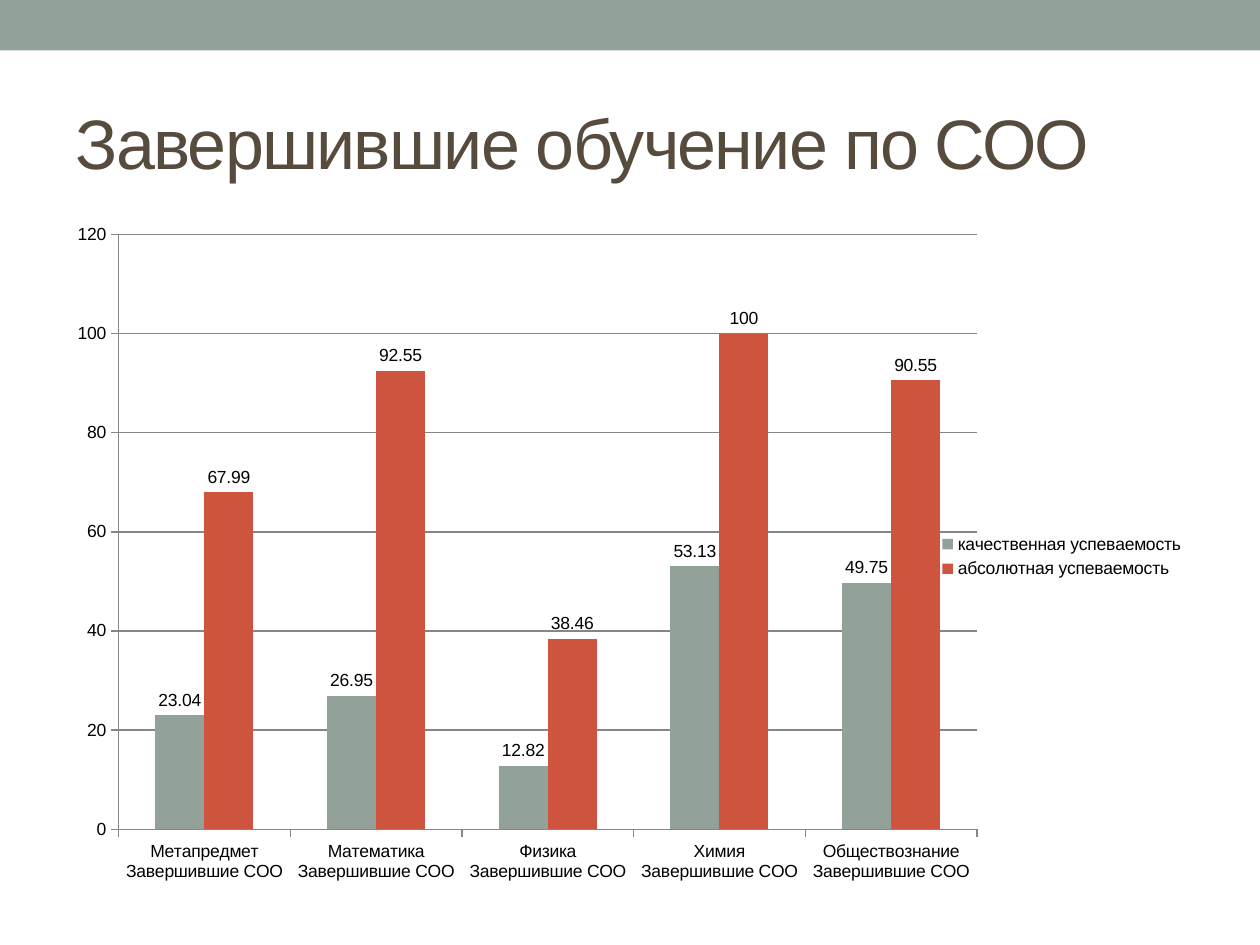
from lxml import etree
from pptx import Presentation
from pptx.chart.data import CategoryChartData
from pptx.dml.color import RGBColor
from pptx.enum.chart import XL_CHART_TYPE, XL_LABEL_POSITION, XL_LEGEND_POSITION, XL_TICK_MARK
from pptx.enum.shapes import MSO_SHAPE
from pptx.enum.text import MSO_ANCHOR, PP_ALIGN
from pptx.oxml.ns import qn
from pptx.util import Pt

COLUMN_CLUSTERED = XL_CHART_TYPE.COLUMN_CLUSTERED
OUTSIDE_END = XL_LABEL_POSITION.OUTSIDE_END
LEGEND_RIGHT = XL_LEGEND_POSITION.RIGHT
TICK_OUTSIDE = XL_TICK_MARK.OUTSIDE
RECTANGLE = MSO_SHAPE.RECTANGLE
MIDDLE = MSO_ANCHOR.MIDDLE
LEFT = PP_ALIGN.LEFT

FONT = "Arial"
COLORS = {
    "sage": "93A299",
    "red": "CF543F",
    "brown": "564B3C",
    "black": "000000",
    "axis": "868686",
}

CATEGORIES = [
    f"{subject} Завершившие СОО"
    for subject in ("Метапредмет", "Математика", "Физика", "Химия", "Обществознание")
]
SERIES = [
    ("качественная успеваемость", (23.04, 26.95, 12.82, 53.13, 49.75), "sage"),
    ("абсолютная успеваемость", (67.99, 92.55, 38.46, 100, 90.55), "red"),
]
# Inner plot area as fractions of the chart box
PLOT_AREA = {"x": 0.05, "y": 0.02, "w": 0.76, "h": 0.89}
PLOT_AREA.update(x=0.049, y=0.021, w=0.757, h=0.885)


def color(name):
    return RGBColor.from_string(COLORS[name])


def add_band(slide, left, top, width, height):
    band = slide.shapes.add_shape(RECTANGLE, Pt(left), Pt(top), Pt(width), Pt(height))
    band.shadow.inherit = False
    band.fill.solid()
    band.fill.fore_color.rgb = color("sage")
    band.line.fill.background()


def place_title(slide, left, top, width, height):
    title = slide.shapes.title
    title.left, title.top, title.width, title.height = map(Pt, (left, top, width, height))
    text_frame = title.text_frame
    text_frame.text = "Завершившие обучение по СОО"
    text_frame.word_wrap = True
    text_frame.vertical_anchor = MIDDLE
    paragraph = text_frame.paragraphs[0]
    paragraph.alignment = LEFT
    run = paragraph.runs[0]
    run.font.name = FONT
    run.font.size = Pt(40)
    run.font.color.rgb = color("brown")
    run.font._element.set("spc", "-100")


def set_plot_layout(chart):
    plot_area = chart._chartSpace.chart.plotArea
    layout = plot_area.find(qn("c:layout"))
    if layout is None:
        layout = etree.Element(qn("c:layout"))
        plot_area.insert(0, layout)
    manual = etree.SubElement(layout, qn("c:manualLayout"))
    settings = {"layoutTarget": "inner", "xMode": "edge", "yMode": "edge", **PLOT_AREA}
    for name, value in settings.items():
        etree.SubElement(manual, qn(f"c:{name}")).set("val", str(value))


def add_results_chart(slide, left, top, width, height):
    data = CategoryChartData()
    data.categories = CATEGORIES
    for name, values, _ in SERIES:
        data.add_series(name, values)
    frame = slide.shapes.add_chart(
        COLUMN_CLUSTERED, Pt(left), Pt(top), Pt(width), Pt(height), data
    )
    chart = frame.chart
    chart.has_title = False
    chart.font.name = FONT
    chart.font.size = Pt(10)
    chart.font.color.rgb = color("black")

    # Columns and their values
    plot = chart.plots[0]
    plot.vary_by_categories = False
    plot.gap_width = 150
    plot.overlap = 0
    for series, (_, _, fill) in zip(plot.series, SERIES):
        series.format.fill.solid()
        series.format.fill.fore_color.rgb = color(fill)
        series.data_labels.show_value = True
        series.data_labels.position = OUTSIDE_END

    # Axes and gridlines
    value_axis = chart.value_axis
    value_axis.minimum_scale = 0
    value_axis.maximum_scale = 120
    value_axis.major_unit = 20
    value_axis.has_major_gridlines = True
    for axis in (chart.category_axis, value_axis):
        axis.major_tick_mark = TICK_OUTSIDE
    for line in (
        chart.category_axis.format.line,
        value_axis.format.line,
        value_axis.major_gridlines.format.line,
    ):
        line.color.rgb = color("axis")
        line.width = Pt(0.75)

    chart.has_legend = True
    chart.legend.position = LEGEND_RIGHT
    chart.legend.include_in_layout = False
    set_plot_layout(chart)


def main():
    presentation = Presentation()
    presentation.slide_width = Pt(720)
    presentation.slide_height = Pt(540)
    slide = presentation.slides.add_slide(presentation.slide_layouts[5])
    add_band(slide, 0, 0, 720, 28.8)
    place_title(slide, 36, 42, 648, 78)
    add_results_chart(slide, 36, 126, 648, 384)
    presentation.save("out.pptx")


if __name__ == "__main__":
    main()
